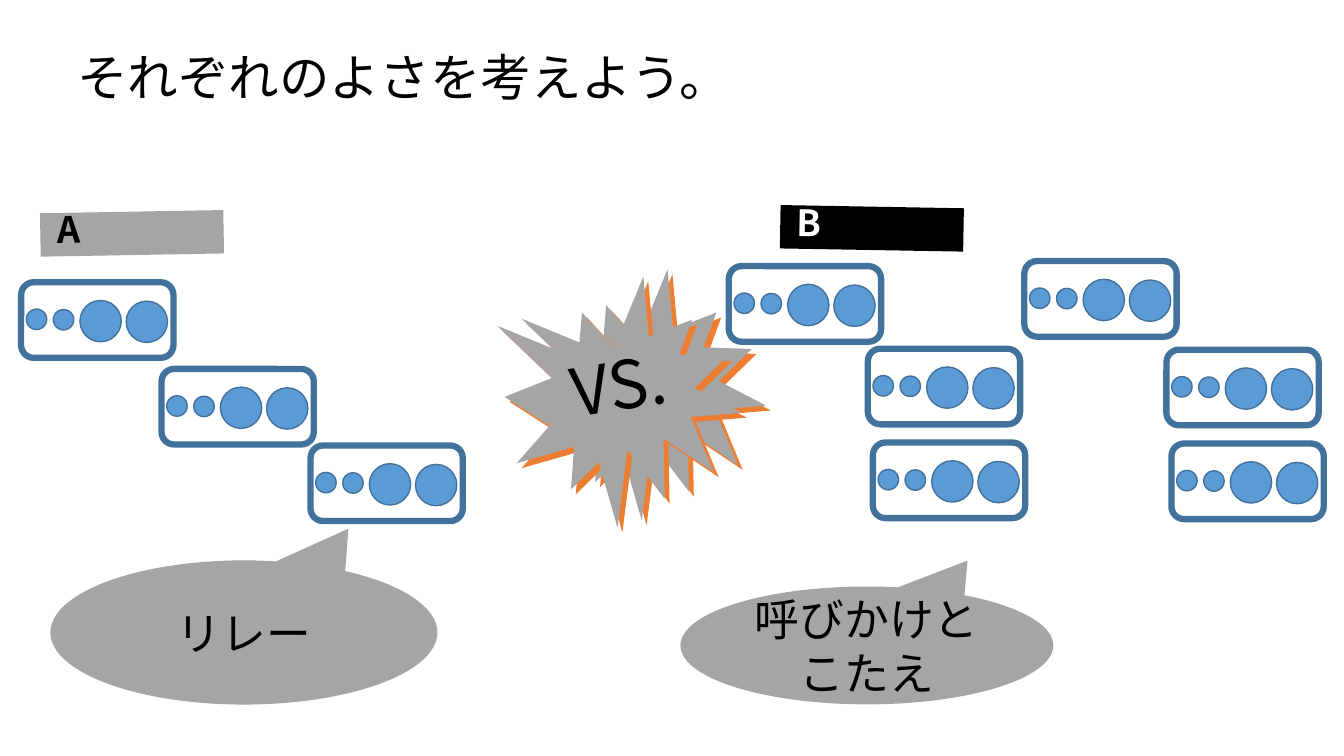
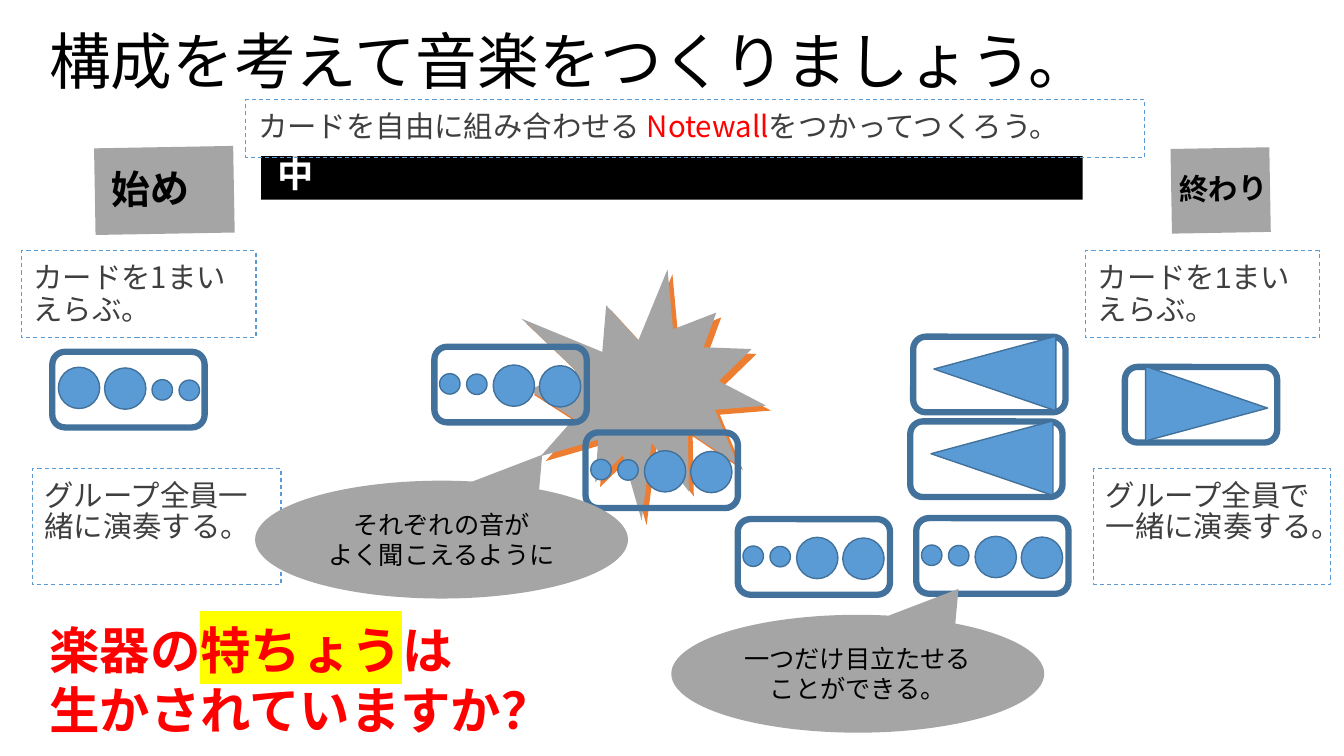
from dataclasses import dataclass
from typing import Any, Iterable, Optional

from lxml import etree
from pptx import Presentation
from pptx.dml.color import RGBColor
from pptx.enum.dml import MSO_LINE
from pptx.enum.shapes import MSO_SHAPE
from pptx.enum.text import MSO_ANCHOR, MSO_AUTO_SIZE, PP_ALIGN
from pptx.oxml.ns import qn
from pptx.util import Pt

# Enum members
DASH = MSO_LINE.DASH
RECT, ROUND, OVAL = MSO_SHAPE.RECTANGLE, MSO_SHAPE.ROUNDED_RECTANGLE, MSO_SHAPE.OVAL
WEDGE, BURST, CALL = MSO_SHAPE.ISOSCELES_TRIANGLE, MSO_SHAPE.EXPLOSION1, MSO_SHAPE.OVAL_CALLOUT
TOP, MIDDLE = MSO_ANCHOR.TOP, MSO_ANCHOR.MIDDLE
LEFT, CENTER = PP_ALIGN.LEFT, PP_ALIGN.CENTER
FIXED = MSO_AUTO_SIZE.NONE

# Colours and fonts
BLACK = RGBColor(0x00, 0x00, 0x00)
WHITE = RGBColor(0xFF, 0xFF, 0xFF)
GREY = RGBColor(0xA5, 0xA5, 0xA5)
DARK = RGBColor(0x3F, 0x3F, 0x3F)
BLUE = RGBColor(0x5B, 0x9B, 0xD5)
NAVY = RGBColor(0x42, 0x71, 0x9B)
ORANGE = RGBColor(0xED, 0x7D, 0x31)
RED = RGBColor(0xFF, 0x00, 0x00)
YELLOW = RGBColor(0xFF, 0xFF, 0x00)
SANS, ARIAL = "Noto Sans CJK JP", "Arial"

# Card geometry, in points
CARD_W, CARD_H = 108.8, 54
DOTS = ((3.7, 19.2, 14.6), (23, 19.5, 14.6), (42, 13, 29.5), (75, 13.5, 29.5))


@dataclass(frozen=True)
class Box:
    x: float
    y: float
    w: float
    h: float
    turn: float = 0


@dataclass(frozen=True)
class Style:
    size: float
    color: RGBColor = BLACK
    bold: bool = False
    space: float = 1.0
    align: Any = LEFT
    anchor: Any = MIDDLE
    inset: tuple = (7.2, 3.6, 7.2, 3.6)
    font: str = SANS


@dataclass(frozen=True)
class Span:
    text: str
    color: Optional[RGBColor] = None
    mark: Optional[RGBColor] = None


@dataclass(frozen=True)
class Label:
    text: str
    box: Box
    fill: RGBColor
    style: Style


@dataclass(frozen=True)
class Note:
    """Text in a dashed box or a callout."""
    lines: tuple
    box: Box
    style: Style


@dataclass(frozen=True)
class Card:
    x: float
    y: float
    kind: str = "dots"
    flip: bool = False


NOTE = Style(21, DARK, space=0.9, anchor=TOP, inset=(8.64, 8.64, 8.64, 0))
NOTE_R = Style(21, DARK, space=0.9, anchor=TOP, inset=(8.64, 8.64, 8.64, 0), font=ARIAL)
LARGE = Style(32, align=CENTER)
SMALL = Style(18, align=CENTER)
PAD = (12, 3.6, 7.2, 3.6)


def apply(target: Any, values: dict) -> None:
    for key, value in values.items():
        setattr(target, key, value)


def place(shape: Any, box: Box) -> None:
    apply(shape, {"left": Pt(box.x), "top": Pt(box.y), "width": Pt(box.w),
                  "height": Pt(box.h), "rotation": box.turn})


def paint(shape: Any, fill: Optional[RGBColor], line: Optional[RGBColor] = None,
          width: float = 1) -> None:
    if fill is None:
        shape.fill.background()
    else:
        shape.fill.solid()
        shape.fill.fore_color.rgb = fill
    if line is None:
        shape.line.fill.background()
    else:
        shape.line.color.rgb = line
        shape.line.width = Pt(width)


def write(shape: Any, lines: Iterable, style: Style) -> None:
    """Fill a shape; each line is a string or a tuple of spans."""
    frame = shape.text_frame
    sides = ("margin_left", "margin_top", "margin_right", "margin_bottom")
    apply(frame, {"word_wrap": True, "auto_size": FIXED, "vertical_anchor": style.anchor,
                  **{side: Pt(n) for side, n in zip(sides, style.inset)}})
    for i, line in enumerate(lines):
        para = frame.add_paragraph() if i else frame.paragraphs[0]
        apply(para, {"alignment": style.align, "line_spacing": style.space,
                     "space_before": Pt(0)})
        for span in (Span(line),) if isinstance(line, str) else line:
            run = para.add_run()
            run.text = span.text
            apply(run.font, {"size": Pt(style.size), "bold": style.bold, "name": style.font})
            run.font.color.rgb = span.color or style.color
            latin = run._r.get_or_add_rPr().find(qn("a:latin"))
            east = etree.Element(qn("a:ea"), typeface=SANS)
            latin.addnext(east)
            if span.mark is not None:
                mark = etree.Element(qn("a:highlight"))
                etree.SubElement(mark, qn("a:srgbClr"), val=str(span.mark))
                latin.addprevious(mark)


def draw(shapes: Any, kind: Any, box: Box, fill: Optional[RGBColor],
         line: Optional[RGBColor] = None, width: float = 1) -> Any:
    shape = shapes.add_shape(kind, Pt(box.x), Pt(box.y), Pt(box.w), Pt(box.h))
    shape.rotation = box.turn
    shape.shadow.inherit = False
    paint(shape, fill, line, width)
    return shape


def burst(shapes: Any, x: float, y: float) -> Any:
    """Grey burst with a hard orange shadow."""
    shape = draw(shapes, BURST, Box(x, y, 165.6, 174.2, 351), GREY)
    effect = shape.element.spPr.find(qn("a:effectLst"))
    shade = etree.SubElement(effect, qn("a:outerShdw"), blurRad="0", dist=str(Pt(5)),
                             dir="2700000", algn="ctr", rotWithShape="0")
    etree.SubElement(shade, qn("a:srgbClr"), val=str(ORANGE))
    return shape


def card(shapes: Any, item: Card) -> None:
    """Rounded card holding four dots or a wedge."""
    group = shapes.add_group_shape().shapes
    draw(group, ROUND, Box(item.x, item.y, CARD_W, CARD_H), None, NAVY, 4.5)
    if item.kind == "wedge":
        turn = 270 if item.flip else 90
        shape = draw(group, WEDGE, Box(item.x + 31.7, item.y - 17.3, 53.3, 87.1, turn), BLUE, NAVY)
        shape.adjustments[0] = 0.56
        return
    for x, y, size in DOTS:
        if item.flip:
            x, y = CARD_W - x - size, CARD_H - y - size
        draw(group, OVAL, Box(item.x + x, item.y + y, size, size), BLUE, NAVY)


def dashed(shapes: Any, note: Note) -> None:
    shape = draw(shapes, RECT, note.box, None, BLUE, 0.75)
    shape.line.dash_style = DASH
    write(shape, note.lines, note.style)


def callout(shapes: Any, note: Note) -> None:
    shape = draw(shapes, CALL, note.box, GREY)
    shape.adjustments[0], shape.adjustments[1] = 0.27, -0.72
    write(shape, note.lines, note.style)


def start(deck: Any, title: str, box: Box, size: float, labels: tuple) -> Any:
    """New slide with title, label bands and the shared burst."""
    slide = deck.slides.add_slide(deck.slide_layouts[4])
    place(slide.shapes.title, box)
    write(slide.shapes.title, (title,), Style(size, space=0.9))
    slots = {slot.placeholder_format.idx: slot for slot in slide.placeholders}
    for idx, label in zip((1, 3), labels):
        place(slots[idx], label.box)
        paint(slots[idx], label.fill)
        write(slots[idx], (label.text,), label.style)
    for idx in (2, 4):
        node = slots[idx].element
        node.getparent().remove(node)
    burst(slide.shapes, 379.5, 195.8)
    return slide.shapes


def compare(deck: Any) -> None:
    """Slide 1: relay against call and response."""
    shapes = start(deck, "それぞれのよさを考えよう。", Box(48.2, 18.7, 878.4, 77.8), 36, (
        Label("A", Box(28.8, 151.2, 131, 31, 359), GREY,
              Style(25.9, BLACK, True, 0.7, inset=PAD)),
        Label("B", Box(557.3, 147.6, 131, 31, 1), BLACK,
              Style(25.9, WHITE, True, 0.7, inset=PAD))))
    write(burst(shapes, 362.2, 200.9), ("VS.",), Style(47.2, space=0.6, align=CENTER))
    for x, y in ((15.1, 201.6), (115.4, 263.5), (221.8, 318.2),
                 (520.6, 190.1), (619.9, 249.1), (623.5, 316.1),
                 (731.7, 186.5), (833.2, 249.8), (836.8, 316.8)):
        card(shapes, Card(x, y))
    callout(shapes, Note(("リレー",), Box(36, 400.3, 276.5, 103), LARGE))
    callout(shapes, Note(("呼びかけとこたえ",), Box(486, 419, 266.4, 84.2), LARGE))


def compose(deck: Any) -> None:
    """Slide 2: beginning, middle and end."""
    shapes = start(deck, "構成を考えて音楽をつくりましょう。", Box(28.1, 0.7, 818.6, 90.7), 44, (
        Label("始め", Box(67.7, 105.1, 99.4, 61.9, 359), GREY,
              Style(28, BLACK, True, 0.9, inset=PAD)),
        Label("中", Box(186.5, 111.6, 586.8, 31, 0), BLACK,
              Style(25.9, WHITE, True, 0.7, inset=PAD))))
    end = draw(shapes, RECT, Box(836.6, 105.8, 70.6, 60.5, 359), GREY)
    write(end, ("終わり",), Style(21, BLACK, True, 0.9, inset=(5.76, 0, 0, 0)))

    for item in (Card(37.4, 251.3, flip=True), Card(310.3, 247.7), Card(527, 370.8),
                 Card(418.3, 308.9), Card(652.3, 240.5, "wedge", True),
                 Card(650.2, 301, "wedge", True), Card(654.5, 370.1),
                 Card(803.5, 262.1, "wedge")):
        card(shapes, item)

    tool = (Span("カードを自由に組み合わせる "), Span("Notewall", RED),
            Span("をつかってつくろう。"))
    pick = ("カードを1まいえらぶ。",)
    for note in (
            Note(("グループ全員一緒に演奏する。",), Box(23, 334.8, 177.8, 82.8), NOTE),
            Note(pick, Box(15.1, 179.3, 167.8, 61.9), NOTE),
            Note(("グループ全員で一緒に演奏する。",), Box(781.2, 334.8, 169.2, 82.8), NOTE_R),
            Note(pick, Box(775.4, 179.3, 167, 61.9), NOTE_R),
            Note((tool,), Box(175.7, 71.3, 642.2, 41), NOTE)):
        dashed(shapes, note)

    callout(shapes, Note(("それぞれの音が", "よく聞こえるように"),
                         Box(182.2, 343.4, 266.4, 84.2), SMALL))
    callout(shapes, Note(("一つだけ目立たせることができる。",),
                         Box(479.5, 439.2, 266.4, 84.2), SMALL))

    # Closing question
    ask = shapes.add_textbox(Pt(28.1), Pt(438.5), Pt(391.7), Pt(94.3))
    first = (Span("楽器の"), Span("特ちょう", mark=YELLOW), Span("は"))
    write(ask, (first, "生かされていますか？"), Style(36, RED, True, anchor=TOP))


def main() -> None:
    deck = Presentation()
    apply(deck, {"slide_width": Pt(960), "slide_height": Pt(540)})
    compare(deck)
    compose(deck)
    deck.save("out.pptx")


if __name__ == "__main__":
    main()
